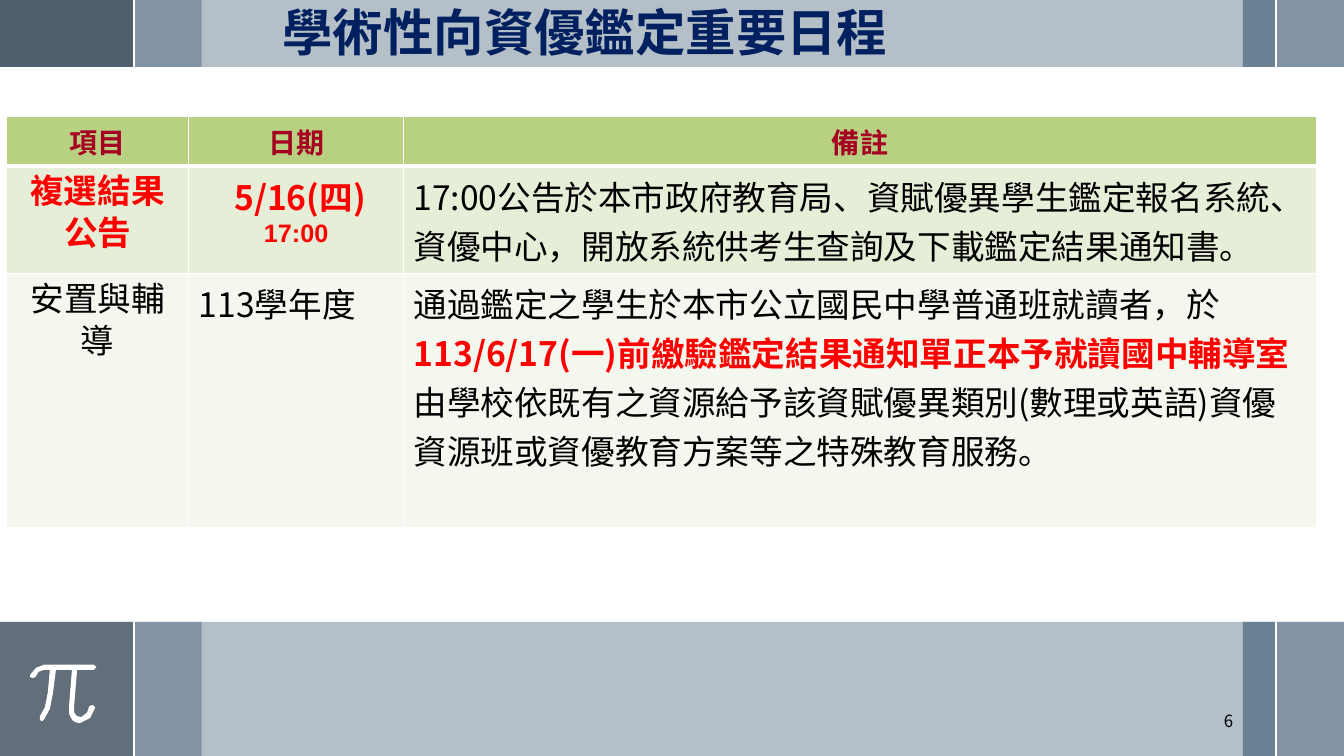
from dataclasses import dataclass
from typing import Any

from lxml import etree
from pptx import Presentation
from pptx import util as u
from pptx.dml.color import RGBColor
from pptx.enum import shapes, text
from pptx.oxml import ns

WHITE = RGBColor(0xFF, 0xFF, 0xFF)
BLACK = RGBColor(0x00, 0x00, 0x00)
RED = RGBColor(0xFF, 0x00, 0x00)
NAVY = RGBColor(0x00, 0x20, 0x60)
CRIMSON = RGBColor(0xA5, 0x00, 0x21)
PALE_STEEL = RGBColor(0x9B, 0xAA, 0xB7)
STEEL = RGBColor(0x6A, 0x80, 0x93)
SLATE = RGBColor(0x47, 0x55, 0x62)
HEADER_GREEN = RGBColor(0xB8, 0xD0, 0x82)
LIGHT_GREEN = RGBColor(0xE6, 0xEE, 0xD8)
PALE_GREEN = RGBColor(0xF3, 0xF7, 0xED)

WIDTH, HEIGHT = 33.87, 19.05
TOP_BAND, BOTTOM_BAND = 1.69, 3.38
LEFT_RULE, RIGHT_RULE = 3.38, 32.16
SANS, SANS_TC = "Noto Sans CJK SC", "Noto Sans CJK TC"
CENTER, LEFT = text.PP_ALIGN.CENTER, text.PP_ALIGN.LEFT


@dataclass(frozen=True)
class Style:
    size: float
    color: RGBColor = BLACK
    bold: bool = False
    font: str = SANS


@dataclass(frozen=True)
class Line:
    spans: list[tuple[str, Style]]
    align: Any = LEFT
    spacing: Any = None


@dataclass(frozen=True)
class Block:
    left: float
    width: float
    color: RGBColor
    opacity: int = 100


@dataclass(frozen=True)
class Row:
    height: float
    fill: RGBColor
    cells: list[list[Line]]
    bottom_border: float = 1


TITLE = Style(36, NAVY, True, "Arial")
HEADING = Style(20, CRIMSON, True, "Arial")
BODY = Style(24)
ALERT = Style(24, RED, True)
TIME = Style(18, RED, True, "Arial")
PAGE_NUMBER = Style(12, font=SANS_TC)

BLOCKS = [
    Block(RIGHT_RULE, WIDTH - RIGHT_RULE, PALE_STEEL),
    Block(31.32, RIGHT_RULE - 31.32, STEEL),
    Block(LEFT_RULE, 1.7, PALE_STEEL),
    Block(0, WIDTH, STEEL, 50),
    Block(0, LEFT_RULE, SLATE, 75),
]
TOP_CORNER = Block(0, LEFT_RULE, STEEL)

COLUMNS = [4.6, 5.41, 23.01]
ROWS = [
    Row(1.26, HEADER_GREEN,
        [[Line([(name, HEADING)], CENTER)] for name in ("項目", "日期", "備註")], 3),
    Row(2.71, LIGHT_GREEN, [
        [Line([(part, ALERT)], CENTER, u.Pt(30)) for part in ("複選結果", "公告")],
        [Line([(" 5/16(四)", ALERT)], CENTER), Line([("17:00", TIME)], CENTER)],
        [Line([("17:00公告於本市政府教育局、資賦優異學生鑑定報名系統、"
                "資優中心，開放系統供考生查詢及下載鑑定結果通知書。", BODY)])],
    ]),
    Row(6.4, PALE_GREEN, [
        [Line([("安置與輔導", BODY)], CENTER, u.Pt(30))],
        [Line([("113學年度", BODY)])],
        [Line([("通過鑑定之學生於本市公立國民中學普通班就讀者，於", BODY),
               ("113/6/17(一)前繳驗鑑定結果通知單正本予就讀國中輔導室", ALERT)]),
         Line([("由學校依既有之資源給予該資賦優異類別(數理或英語)"
                "資優資源班或資優教育方案等之特殊教育服務。", BODY)])],
    ]),
]

# Outline of the pi sign, in hundredths of an inch
PI_POINTS = [
    (93, 660), (44, 660), (36, 663), (31, 669), (30.5, 671), (32, 672), (33, 672),
    (35, 671), (38, 666), (44, 664), (50, 664), (48, 687), (45, 702), (40, 711),
    (39.5, 713), (41, 715), (43, 714), (49, 703), (52.5, 688), (55, 664), (72, 664),
    (69, 701), (69, 708), (72, 714), (75, 716), (79, 717), (81, 716), (89, 712),
    (94, 702), (92, 700), (89, 701), (87, 707), (81, 712), (76, 711), (73, 707),
    (73, 701), (76, 664), (93, 664), (95, 662),
]


def sub(parent: Any, tag: str, **attributes: str) -> Any:
    """Append a DrawingML child element."""
    return etree.SubElement(parent, ns.qn(tag), attributes)


def write(frame: Any, lines: list[Line]) -> None:
    for index, line in enumerate(lines):
        para = frame.add_paragraph() if index else frame.paragraphs[0]
        for name, value in {"alignment": line.align, "line_spacing": line.spacing}.items():
            setattr(para, name, value)
        for words, style in line.spans:
            span = para.add_run()
            span.text = words
            formats = {"name": style.font, "size": u.Pt(style.size), "bold": style.bold}
            for name, value in formats.items():
                setattr(span.font, name, value)
            span.font.color.rgb = style.color
            sub(span.font._element, "a:ea", typeface=SANS_TC)


def add_text(page: Any, place: tuple[float, ...], line: Line, anchor: Any,
             margins: tuple[float, float]) -> None:
    frame = page.shapes.add_textbox(*map(u.Cm, place)).text_frame
    side, edge = map(u.Cm, margins)
    formats = {"word_wrap": True, "vertical_anchor": anchor, "margin_left": side,
               "margin_right": side, "margin_top": edge, "margin_bottom": edge}
    for name, value in formats.items():
        setattr(frame, name, value)
    write(frame, [line])


def add_block(page: Any, block: Block, top: float, height: float) -> None:
    box = page.shapes.add_shape(shapes.MSO_SHAPE.RECTANGLE, u.Cm(block.left), u.Cm(top),
                                u.Cm(block.width), u.Cm(height))
    box.shadow.inherit = False
    box.fill.solid()
    box.fill.fore_color.rgb = block.color
    box.line.fill.background()
    if block.opacity < 100:
        color = box._element.spPr.find(".//" + ns.qn("a:srgbClr"))
        sub(color, "a:alpha", val=str(block.opacity * 1000))


def add_band(page: Any, blocks: list[Block], top: float, height: float) -> None:
    for block in blocks:
        add_block(page, block, top, height)
    for x in (LEFT_RULE, RIGHT_RULE):
        rule = page.shapes.add_connector(shapes.MSO_CONNECTOR.STRAIGHT, u.Cm(x), u.Cm(top),
                                         u.Cm(x), u.Cm(top + height))
        rule.line.color.rgb = WHITE
        rule.line.width = u.Pt(1.5)
        sub(rule._element.spPr, "a:effectLst")


def add_pi(page: Any) -> None:
    start, *rest = PI_POINTS
    builder = page.shapes.build_freeform(*start, scale=float(u.Cm(0.0254)))
    builder.add_line_segments(rest, close=True)
    sign = builder.convert_to_shape()
    sign.shadow.inherit = False
    sign.fill.solid()
    sign.fill.fore_color.rgb = WHITE
    sign.line.color.rgb = WHITE
    sign.line.width = u.Pt(0.75)


def set_borders(cell: Any, bottom: float, top: float) -> None:
    properties = cell._tc.get_or_add_tcPr()
    for side, width in {"L": 1, "R": 1, "T": top, "B": bottom}.items():
        border = sub(properties, f"a:ln{side}", w=str(u.Pt(width)))
        sub(sub(border, "a:solidFill"), "a:srgbClr", val=str(WHITE))


def add_schedule(page: Any) -> None:
    height = sum(row.height for row in ROWS)
    table = page.shapes.add_table(len(ROWS), len(COLUMNS), u.Cm(0.16), u.Cm(2.93),
                                  u.Cm(sum(COLUMNS)), u.Cm(height)).table
    for column, width in zip(table.columns, COLUMNS):
        column.width = u.Cm(width)
    top_border = 1.0
    for index, row in enumerate(ROWS):
        table.rows[index].height = u.Cm(row.height)
        for cell, lines in zip(table.rows[index].cells, row.cells):
            set_borders(cell, row.bottom_border, top_border)
            cell.fill.solid()
            cell.fill.fore_color.rgb = row.fill
            write(cell.text_frame, lines)
        top_border = row.bottom_border


def main() -> None:
    deck = Presentation()
    deck.slide_width, deck.slide_height = u.Cm(WIDTH), u.Cm(HEIGHT)
    page = deck.slides.add_slide(deck.slide_layouts[6])
    add_band(page, BLOCKS, HEIGHT - BOTTOM_BAND, BOTTOM_BAND)
    add_pi(page)
    add_band(page, [*BLOCKS[:3], TOP_CORNER, *BLOCKS[3:]], 0, TOP_BAND)
    add_text(page, (6.78, 0, 19.74, 1.73),
             Line([("學術性向資優鑑定重要日程", TITLE)], text.PP_ALIGN.JUSTIFY, 0.85),
             text.MSO_ANCHOR.BOTTOM, (0.34, 0.17))
    add_schedule(page)
    add_text(page, (29.64, 17.65, 1.69, 1.01),
             Line([("6", PAGE_NUMBER)], text.PP_ALIGN.RIGHT),
             text.MSO_ANCHOR.MIDDLE, (0.25, 0.13))
    deck.save("out.pptx")


if __name__ == "__main__":
    main()
